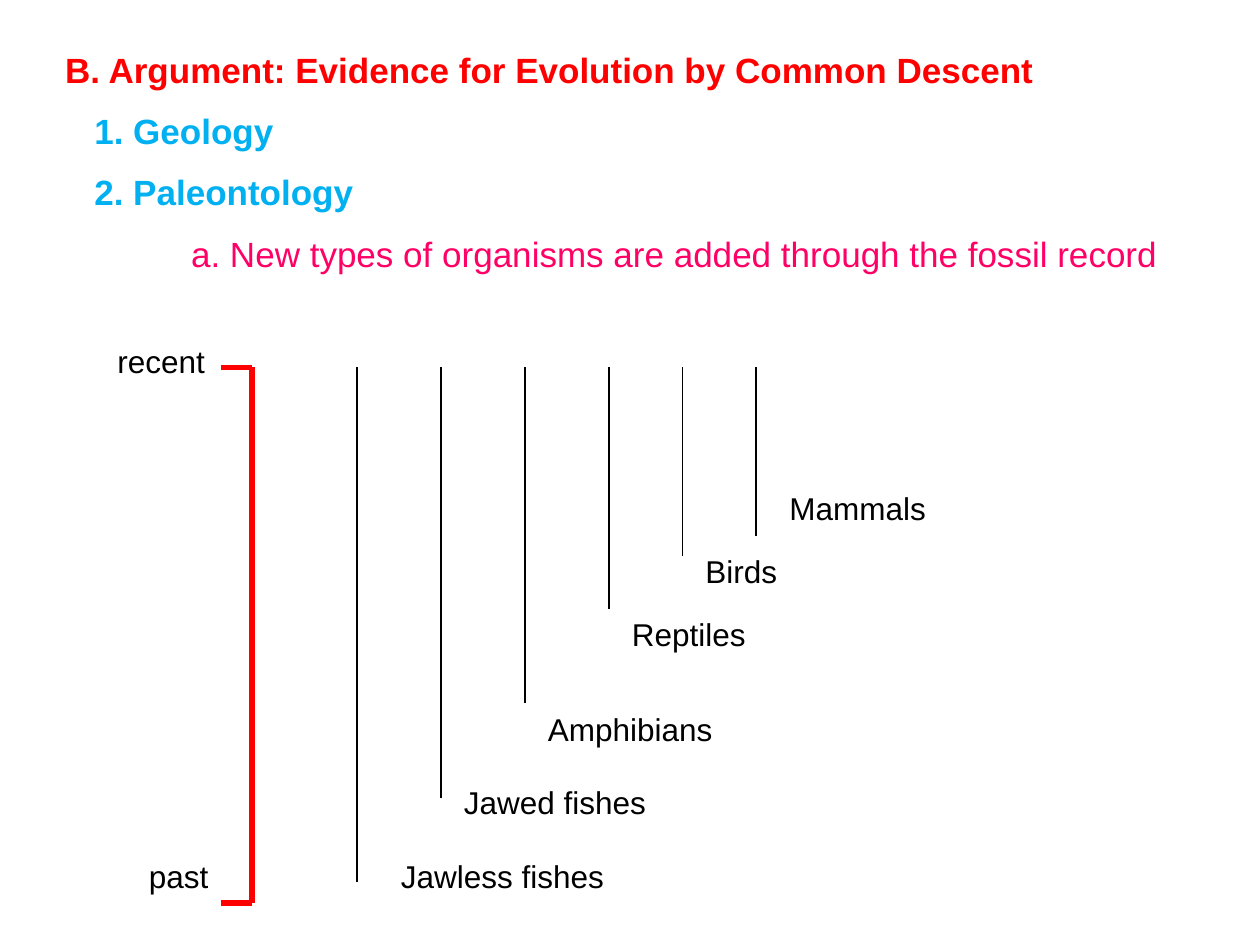
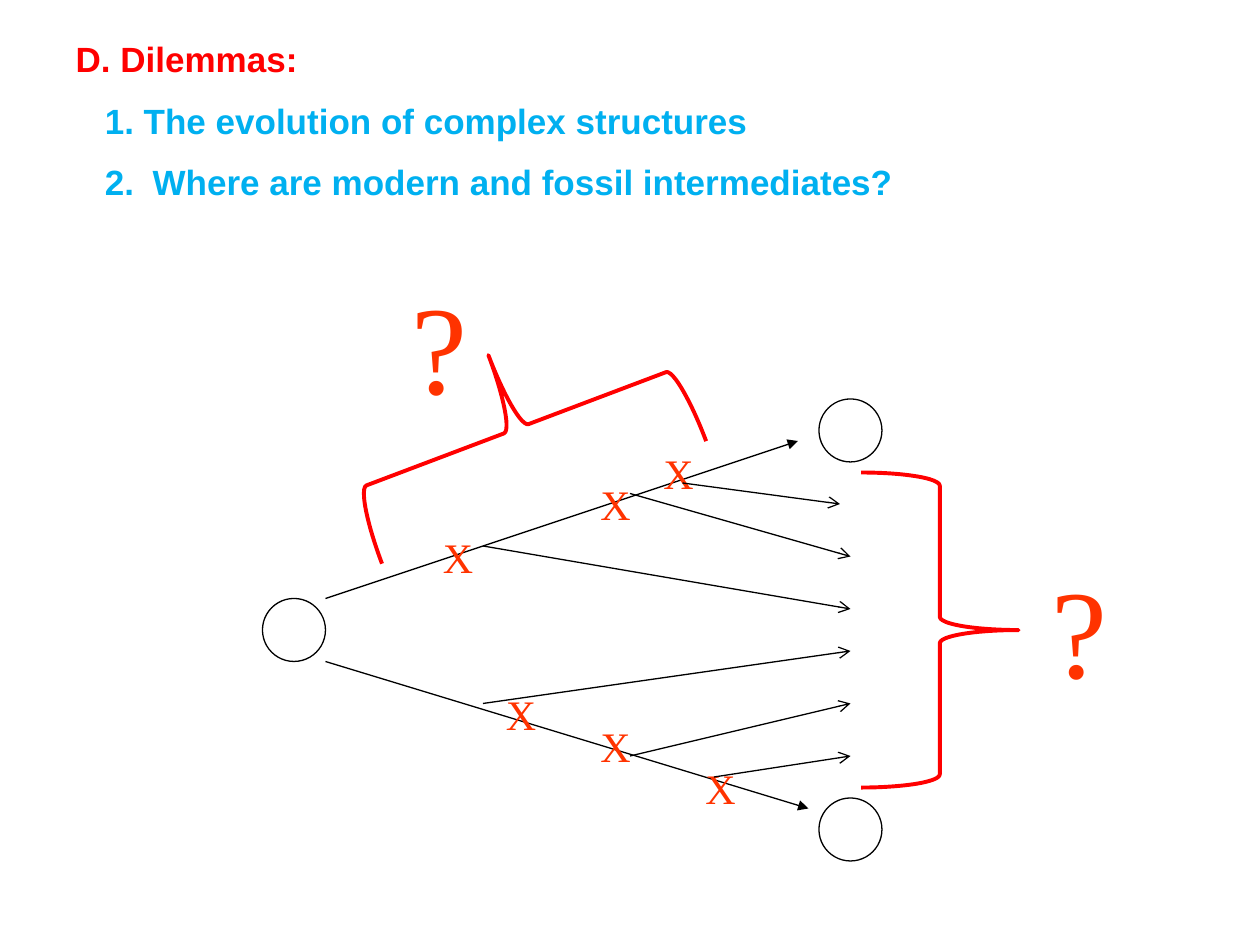
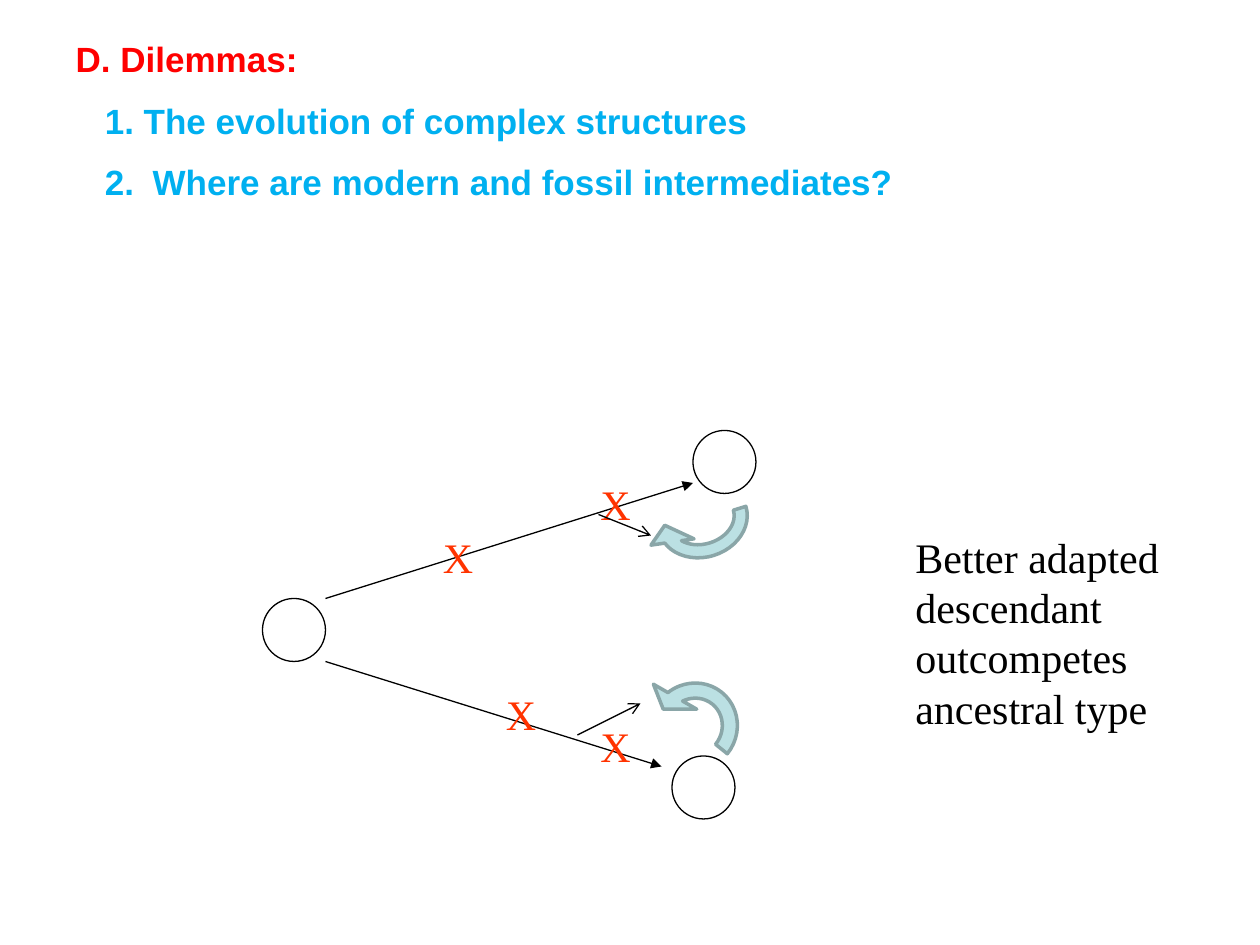
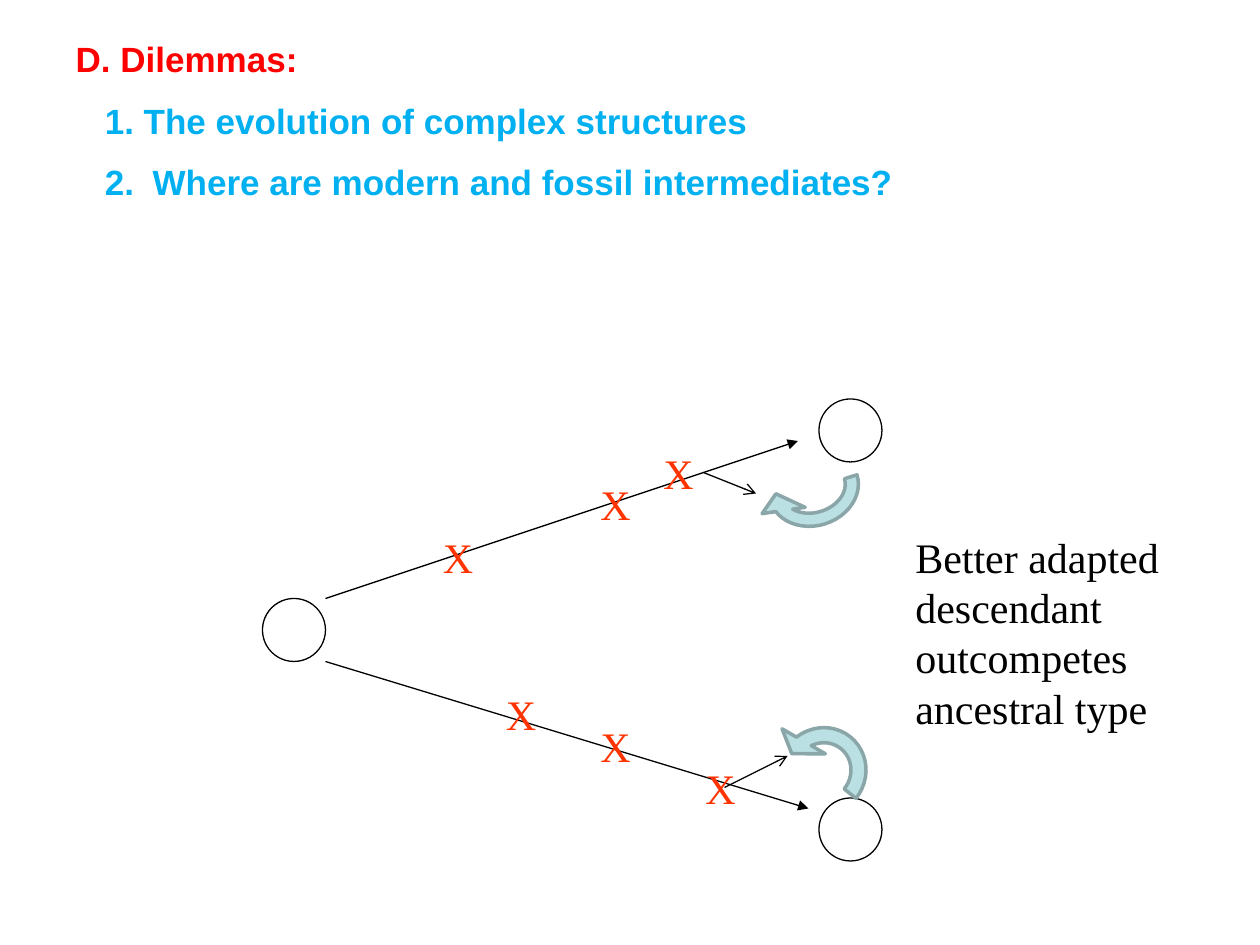
from pptx import Presentation
from pptx.dml.color import RGBColor
from pptx.enum.shapes import MSO_CONNECTOR, MSO_SHAPE
from pptx.enum.text import MSO_ANCHOR, MSO_AUTO_SIZE, PP_ALIGN
from pptx.oxml.ns import qn
from pptx.oxml.xmlchemy import OxmlElement as new_element
from pptx.util import Pt

SANS, SERIF = "Arial", "Times New Roman"
BLACK, RED, BLUE, PINK, ORANGE = "000000", "FF0000", "00B0F0", "FF0066", "FF3300"
ARROW_FILL, ARROW_LINE = "BBE0E3", "8AA6A8"
TITLE_LAYOUT = 5
CIRCLE_SIZE = 36
CURVE_ADJUSTMENTS = (0.125, 16.828, 204.577, 108, 0.207)

OUTLINE_INDENT = 16.7
DILEMMAS = [
    ("D. Dilemmas:", RED, True, 0, 0),
    ("1. The evolution of complex structures", BLUE, True, OUTLINE_INDENT, 0),
    ("2.\tWhere are modern and fossil intermediates?", BLUE, True, OUTLINE_INDENT, 27.3),
]
EVIDENCE = [
    ("B. Argument: Evidence for Evolution by Common Descent", RED, True, 0, 0),
    ("1. Geology", BLUE, True, OUTLINE_INDENT, 0),
    ("2. Paleontology", BLUE, True, OUTLINE_INDENT, 0),
    ("a. New types of organisms are added through the fossil record", PINK, False, 72, 0),
]

TIMELINE_TOP, TIMELINE_BOTTOM, TIMELINE_X = 210, 516, 144
LINEAGES = [
    ("Jawless fishes", 204, 504, 222, 486),
    ("Jawed fishes", 252, 456, 258, 444),
    ("Amphibians", 300, 402, 306, 402),
    ("Reptiles", 348, 348, 354, 348),
    ("Birds", 390, 318, 396, 312),
    ("Mammals", 432, 306, 444, 276),
]

ANCESTOR = (150, 342)
UPPER_START, LOWER_START = (186, 342), (186, 378)
EARLY_MARKS = [(336, 270), (246, 300), (282, 390), (336, 408)]
ALL_MARKS = EARLY_MARKS + [(372, 252), (396, 432)]
FAR_DESCENDANTS = [(468, 228), (468, 456)]
FAR_TIPS = [(456, 252), (462, 462)]


def color(hex_value):
    """Turn a hex string into a colour."""
    return RGBColor.from_string(hex_value)


def set_font(paragraph, name, size, hex_value, bold=False):
    """Set the font of a whole paragraph."""
    font = paragraph.font
    font.name, font.size, font.bold = name, Pt(size), bold
    font.color.rgb = color(hex_value)


def add_heading_slide(presentation, lines, left, top, height):
    """Add a slide whose title holds an outline heading."""
    slide = presentation.slides.add_slide(presentation.slide_layouts[TITLE_LAYOUT])
    title = slide.shapes.title
    title.left, title.top, title.width, title.height = Pt(left), Pt(top), Pt(648), Pt(height)
    frame = title.text_frame
    frame.vertical_anchor = MSO_ANCHOR.TOP
    frame.auto_size = MSO_AUTO_SIZE.SHAPE_TO_FIT_TEXT
    for index, (text, hex_value, bold, indent, hanging) in enumerate(lines):
        paragraph = frame.add_paragraph() if index else frame.paragraphs[0]
        paragraph.text = text
        paragraph.alignment = PP_ALIGN.LEFT
        paragraph.space_before = Pt(11 if index else 0)
        properties = paragraph._p.get_or_add_pPr()
        properties.set("marL", str(Pt(indent + hanging)))
        properties.set("indent", str(Pt(-hanging)))
        set_font(paragraph, SANS, 20, hex_value, bold)
    return slide


def add_text(slide, text, left, top, width, height, name, size, hex_value):
    """Add a wrapped text box with one paragraph."""
    box = slide.shapes.add_textbox(Pt(left), Pt(top), Pt(width), Pt(height))
    frame = box.text_frame
    frame.word_wrap = True
    frame.auto_size = MSO_AUTO_SIZE.SHAPE_TO_FIT_TEXT
    frame.text = text
    set_font(frame.paragraphs[0], name, size, hex_value)


def add_label(slide, text, left, top, width=180):
    """Add a label of the fossil timeline."""
    add_text(slide, text, left, top, width, 36, SANS, 18, BLACK)


def add_line(slide, start, end, hex_value=BLACK, width=0.75, head=None):
    """Add a straight line with an optional arrowhead at its end."""
    points = [Pt(value) for value in (*start, *end)]
    connector = slide.shapes.add_connector(MSO_CONNECTOR.STRAIGHT, *points)
    connector.line.color.rgb = color(hex_value)
    connector.line.width = Pt(width)
    if head:
        tail_end = new_element("a:tailEnd")
        tail_end.set("type", head)
        connector.line._get_or_add_ln().append(tail_end)
    connector._element.spPr.append(new_element("a:effectLst"))


def add_outline(slide, kind, left, top, width, height, hex_value, line_width, rotation=0):
    """Add an unfilled preset shape."""
    shape = slide.shapes.add_shape(kind, Pt(left), Pt(top), Pt(width), Pt(height))
    shape.shadow.inherit = False
    shape.fill.background()
    shape.line.color.rgb = color(hex_value)
    shape.line.width = Pt(line_width)
    shape.rotation = rotation
    return shape


def add_curved_arrow(slide, left, top, height, rotation, flipped=False):
    """Add a filled curved arrow from a descendant to its ancestral type."""
    arrow = add_outline(slide, MSO_SHAPE.CIRCULAR_ARROW, left, top, 69, height,
                        ARROW_LINE, 2, rotation)
    arrow.fill.solid()
    arrow.fill.fore_color.rgb = color(ARROW_FILL)
    for index, value in enumerate(CURVE_ADJUSTMENTS):
        arrow.adjustments[index] = value
    if flipped:
        arrow._element.spPr.find(qn("a:xfrm")).set("flipV", "1")


def add_divergence(slide, descendants, tips, marks, branches):
    """Draw two lineages leaving an ancestor, with marks and side branches."""
    for left, top in [ANCESTOR, *descendants]:
        add_outline(slide, MSO_SHAPE.OVAL, left, top, CIRCLE_SIZE, CIRCLE_SIZE, BLACK, 0.75)
    for start, tip in zip((UPPER_START, LOWER_START), tips):
        add_line(slide, start, tip, head="triangle")
    for left, top in marks:
        add_text(slide, "X", left, top, 36, 36, SERIF, 24, ORANGE)
    for start, end in branches:
        add_line(slide, start, end, head="arrow")


def build_fossil_record(presentation):
    """Build the timeline of organism groups."""
    slide = add_heading_slide(presentation, EVIDENCE, 30, 24, 165)
    for name, x, bottom, label_left, label_top in LINEAGES:
        add_line(slide, (x, TIMELINE_TOP), (x, bottom))
        add_label(slide, name, label_left, label_top)
    add_line(slide, (TIMELINE_X, TIMELINE_TOP), (TIMELINE_X, TIMELINE_BOTTOM), RED, 3)
    for y in (TIMELINE_TOP, TIMELINE_BOTTOM):
        add_line(slide, (TIMELINE_X - 18, y), (TIMELINE_X, y), RED, 3)
    add_label(slide, "recent", 60, 192, 84)
    add_label(slide, "past", 78, 486, 90)


def add_dilemma_slide(presentation):
    """Add a slide with the dilemmas heading."""
    return add_heading_slide(presentation, DILEMMAS, 36, 18, 104)


def build_missing_intermediates(presentation):
    """Build the diagram that questions the missing intermediates."""
    slide = add_dilemma_slide(presentation)
    branches = [
        ((390, 276), (480, 288)), ((360, 282), (486, 318)), ((276, 312), (486, 348)),
        ((276, 402), (486, 372)), ((360, 432), (486, 402)), ((408, 444), (486, 432)),
    ]
    add_divergence(slide, FAR_DESCENDANTS, FAR_TIPS, ALL_MARKS, branches)
    for left, top in [(228, 150), (594, 312)]:
        add_text(slide, "?", left, top, 84, 94, SERIF, 72, ORANGE)
    for left, top, height, rotation in [(250, 146, 198, 69.3), (492, 270, 180, 180)]:
        add_outline(slide, MSO_SHAPE.LEFT_BRACE, left, top, 90, height, RED, 2.25, rotation)


def build_competition(presentation, descendants, tips, marks, branches, upper_curve, lower_curve):
    """Build a stage in which descendants replace ancestral types."""
    slide = add_dilemma_slide(presentation)
    add_divergence(slide, descendants, tips, marks, branches)
    add_curved_arrow(slide, *upper_curve, 60, 162.7)
    add_curved_arrow(slide, *lower_curve, 70.6, 218.9, flipped=True)
    add_text(slide, "Better adapted descendant outcompetes ancestral type",
             516, 300, 174, 124, SERIF, 24, BLACK)


def main():
    """Build and save the presentation."""
    presentation = Presentation()
    presentation.slide_width, presentation.slide_height = Pt(720), Pt(540)
    build_fossil_record(presentation)
    build_missing_intermediates(presentation)
    build_competition(
        presentation, [(396, 246), (384, 432)], [(396, 276), (378, 438)], EARLY_MARKS,
        [((342, 294), (372, 306)), ((330, 420), (366, 402))], (367, 267), (362, 380))
    build_competition(
        presentation, FAR_DESCENDANTS, FAR_TIPS, ALL_MARKS,
        [((402, 270), (432, 282)), ((414, 450), (450, 432))], (430.5, 249), (435.5, 405.5))
    presentation.save("out.pptx")


if __name__ == "__main__":
    main()
